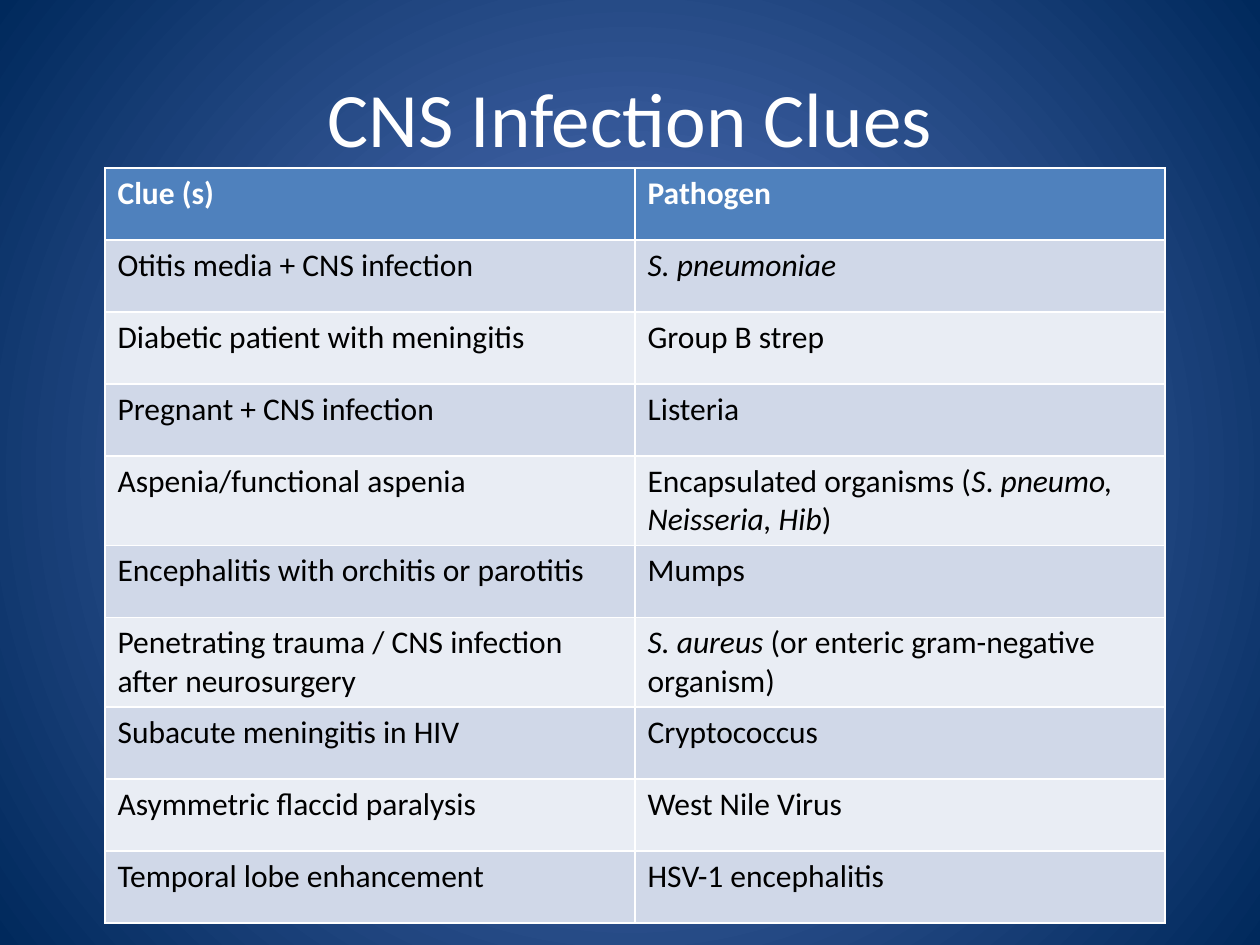
"""Build a slide with a table matching CNS infection clues to pathogens."""
from lxml.etree import SubElement
from pptx import Presentation
from pptx.dml.color import RGBColor
from pptx.enum.text import MSO_ANCHOR, PP_ALIGN
from pptx.oxml.ns import qn
from pptx.util import Emu, Pt

TITLE = "CNS Infection Clues"
ITALIC_MARK = "*"
ROWS = [
    ("Clue (s)", "Pathogen"),
    ("Otitis media + CNS infection", "*S. pneumoniae*"),
    ("Diabetic patient with meningitis", "Group B strep"),
    ("Pregnant + CNS infection", "Listeria"),
    ("Aspenia/functional aspenia",
     "Encapsulated organisms (*S*. *pneumo, Neisseria, Hib*)"),
    ("Encephalitis with orchitis or parotitis", "Mumps"),
    ("Penetrating trauma / CNS infection after neurosurgery",
     "*S. aureus *(or enteric gram-negative organism)"),
    ("Subacute meningitis in HIV", "Cryptococcus"),
    ("Asymmetric flaccid paralysis", "West Nile Virus"),
    ("Temporal lobe enhancement", "HSV-1 encephalitis"),
]
COLORS = {
    "glow": "5E7CC5", "edge": "00295C", "header": "4F81BD",
    "odd": "D0D8E8", "even": "E9EDF4", "light": "FFFFFF", "dark": "000000",
}
FONT = "Calibri"
PAGE_SIZE = (1260, 945)
TITLE_BOX = (63, 38, 1134, 158)
TABLE_LEFT, TABLE_TOP = 105, 168
COLUMN_WIDTH, ROW_HEIGHT = 530, 72


def px(length):
    return Emu(round(length * 914400 / 126))


def color(name):
    return RGBColor.from_string(COLORS[name])


def style(font, size, tint, bold=False):
    font.name, font.size, font.bold = FONT, Pt(size), bold
    font.color.rgb = color(tint)


def paint_background(page):
    fill = page.background.fill
    fill.gradient()
    for stop, name in zip(fill.gradient_stops, ("glow", "edge")):
        stop.color.rgb = color(name)
    for line in page.element.xpath(".//p:bg//a:lin"):
        gradient = line.getparent()
        gradient.remove(line)
        circle = SubElement(gradient, qn("a:path"), {"path": "circle"})
        SubElement(circle, qn("a:fillToRect"), dict.fromkeys("ltrb", "50000"))


def add_title(page):
    title = page.shapes.title
    title.left, title.top, title.width, title.height = map(px, TITLE_BOX)
    title.text_frame.text = TITLE
    title.text_frame.vertical_anchor = MSO_ANCHOR.MIDDLE
    para = title.text_frame.paragraphs[0]
    para.alignment = PP_ALIGN.CENTER
    style(para.font, 44, "light")


def fill_cell(cell, text, row):
    shade = "header" if row == 0 else "odd" if row % 2 else "even"
    cell.fill.solid()
    cell.fill.fore_color.rgb = color(shade)
    para = cell.text_frame.paragraphs[0]
    style(para.font, 18, "dark" if row else "light", bold=row == 0)
    for index, part in enumerate(text.split(ITALIC_MARK)):
        if part:
            span = para.add_run()
            span.text = part
            if index % 2:
                span.font.italic = True


def add_clue_table(page):
    columns = len(ROWS[0])
    table = page.shapes.add_table(
        len(ROWS), columns, px(TABLE_LEFT), px(TABLE_TOP),
        px(columns * COLUMN_WIDTH), px(len(ROWS) * ROW_HEIGHT)).table
    for row, texts in enumerate(ROWS):
        table.rows[row].height = px(ROW_HEIGHT)
        for column, text in enumerate(texts):
            fill_cell(table.cell(row, column), text, row)


def main():
    deck = Presentation()
    deck.slide_width, deck.slide_height = map(px, PAGE_SIZE)
    page = deck.slides.add_slide(deck.slide_layouts.get_by_name("Title Only"))
    paint_background(page)
    add_title(page)
    add_clue_table(page)
    deck.save("out.pptx")


if __name__ == "__main__":
    main()
